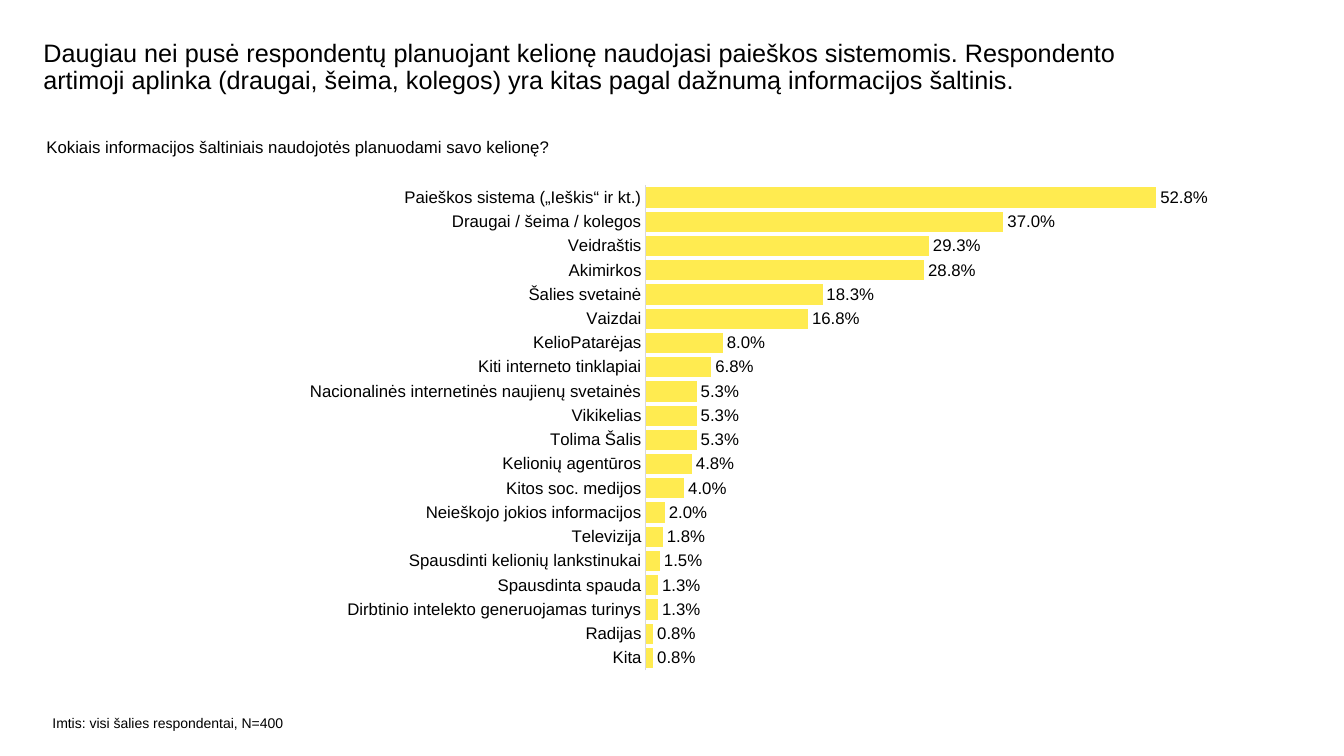
from dataclasses import dataclass

from lxml.etree import fromstring
from pptx import Presentation
from pptx.chart.data import CategoryChartData
from pptx.dml.color import RGBColor
from pptx.enum.chart import XL_CHART_TYPE, XL_LABEL_POSITION, XL_TICK_MARK
from pptx.enum.text import MSO_ANCHOR, MSO_AUTO_SIZE, PP_ALIGN
from pptx.oxml.ns import nsdecls
from pptx.util import Inches, Pt


@dataclass(frozen=True)
class Theme:
    """Colours, type sizes and font of the slide."""
    face: str = "Arial"
    ink: RGBColor = RGBColor(0, 0, 0)
    bar: RGBColor = RGBColor(0xFF, 0xEB, 0x50)
    rule: RGBColor = RGBColor(0xD9, 0xD9, 0xD9)
    head: int = 18
    body: int = 12
    note: int = 10


THEME = Theme()
SIZE = (13.33, 7.5)

HEAD = ("Daugiau nei pusė respondentų planuojant kelionę naudojasi paieškos "
        "sistemomis. Respondento artimoji aplinka (draugai, šeima, kolegos) "
        "yra kitas pagal dažnumą informacijos šaltinis.")
QUERY = "Kokiais informacijos šaltiniais naudojotės planuodami savo kelionę?"
BASE = "Imtis: visi šalies respondentai, N=400"

SHARES = [
    ("Paieškos sistema („Ieškis“ ir kt.)", 0.528),
    ("Draugai / šeima / kolegos", 0.37),
    ("Veidraštis", 0.293),
    ("Akimirkos", 0.288),
    ("Šalies svetainė", 0.183),
    ("Vaizdai", 0.168),
    ("KelioPatarėjas", 0.08),
    ("Kiti interneto tinklapiai", 0.068),
    ("Nacionalinės internetinės naujienų svetainės", 0.053),
    ("Vikikelias", 0.053),
    ("Tolima Šalis", 0.053),
    ("Kelionių agentūros", 0.048),
    ("Kitos soc. medijos", 0.04),
    ("Neieškojo jokios informacijos", 0.02),
    ("Televizija", 0.018),
    ("Spausdinti kelionių lankstinukai", 0.015),
    ("Spausdinta spauda", 0.013),
    ("Dirbtinio intelekto generuojamas turinys", 0.013),
    ("Radijas", 0.008),
    ("Kita", 0.008),
]


def style(font, size):
    """Apply the theme's face and ink at the given size."""
    font.name = THEME.face
    font.size = Pt(size)
    font.color.rgb = THEME.ink


def write(shape, text, size):
    """Fill a shape with one plain paragraph and return it."""
    frame = shape.text_frame
    frame.word_wrap = True
    frame.auto_size = MSO_AUTO_SIZE.NONE
    frame.vertical_anchor = MSO_ANCHOR.TOP
    frame.margin_left = frame.margin_right = 0
    frame.margin_top = frame.margin_bottom = 0
    line = frame.paragraphs[0]
    line.text = text
    line.alignment = PP_ALIGN.LEFT
    style(line.font, size)
    return line


def add_head(slide, box):
    """Place the title in its box."""
    title = slide.shapes.title
    title.left, title.top, title.width, title.height = map(Inches, box)
    write(title, HEAD, THEME.head).line_spacing = 0.9


def add_text(slide, box, text, size):
    """Place a text box in its box."""
    write(slide.shapes.add_textbox(*map(Inches, box)), text, size)


def set_plot(chart, left, top, width, height):
    """Fix the plot area as shares of the chart."""
    parts = {"x": left, "y": top, "w": width, "h": height}
    marks = "".join(f'<c:{key}Mode val="edge"/>' for key in "xy")
    marks += "".join(f'<c:{key} val="{val}"/>' for key, val in parts.items())
    area = chart.plots[0]._element.getparent()
    for old in area.findall("{*}layout"):
        area.remove(old)
    area.insert(0, fromstring(
        f'<c:layout {nsdecls("c")}><c:manualLayout>'
        f'<c:layoutTarget val="inner"/>{marks}</c:manualLayout></c:layout>'))


def add_bars(slide, box):
    """Place the ranked bar chart in its box."""
    data = CategoryChartData(number_format="0.0%")
    names, values = zip(*reversed(SHARES))
    data.categories = names
    data.add_series("Series 1", values)
    chart = slide.shapes.add_chart(
        XL_CHART_TYPE.BAR_CLUSTERED, *map(Inches, box), data).chart
    chart.has_title = chart.has_legend = False
    style(chart.font, THEME.body)
    set_plot(chart, 0.37, 0.02, 0.61, 0.96)

    axis = chart.category_axis
    axis.major_tick_mark = axis.minor_tick_mark = XL_TICK_MARK.NONE
    axis.format.line.color.rgb = THEME.rule
    axis.format.line.width = Pt(0.75)
    style(axis.tick_labels.font, THEME.body)

    scale = chart.value_axis
    scale.minimum_scale, scale.maximum_scale = 0, 0.6
    scale.has_major_gridlines = False
    scale.visible = False

    plot = chart.plots[0]
    plot.gap_width = 20
    plot.vary_by_categories = False
    fill = plot.series[0].format.fill
    fill.solid()
    fill.fore_color.rgb = THEME.bar
    plot.has_data_labels = True
    labels = plot.data_labels
    labels.show_value = True
    labels.position = XL_LABEL_POSITION.OUTSIDE_END
    labels.number_format = "0.0%"
    labels.number_format_is_linked = False
    style(labels.font, THEME.body)


def main():
    """Build the slide and save it."""
    deck = Presentation()
    deck.slide_width, deck.slide_height = map(Inches, SIZE)
    slide = deck.slides.add_slide(deck.slide_layouts[5])
    add_head(slide, (0.43, 0.4, 11.25, 0.6))
    add_text(slide, (0.46, 1.36, 11.89, 0.61), QUERY, THEME.body)
    add_text(slide, (0.52, 7.09, 2.53, 0.24), BASE, THEME.note)
    add_bars(slide, (2.91, 1.74, 9.44, 5.01))
    deck.save("out.pptx")


if __name__ == "__main__":
    main()
